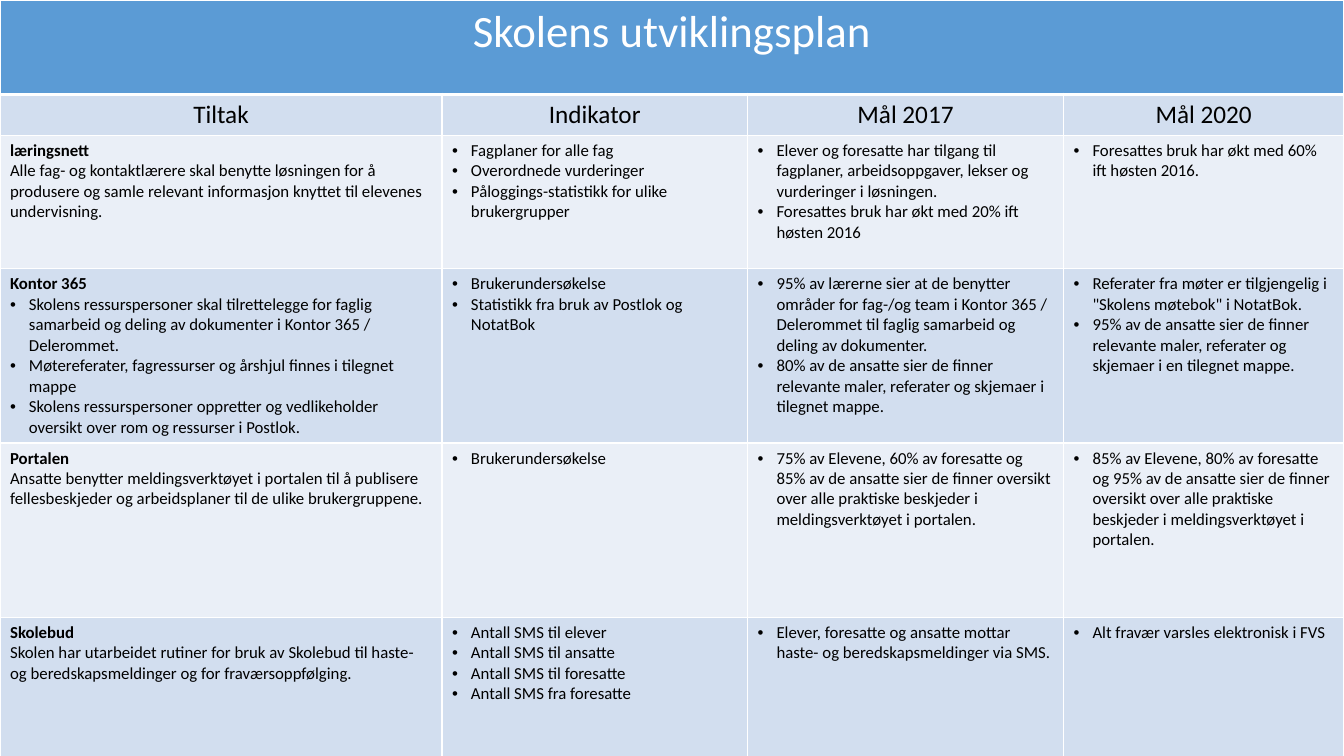
"""Build a one-slide school development plan as a table."""
from dataclasses import dataclass

from lxml.etree import SubElement
from pptx import Presentation
from pptx.dml.color import RGBColor
from pptx.enum.text import PP_ALIGN
from pptx.oxml.ns import qn
from pptx.util import Emu, Pt


@dataclass(frozen=True)
class Theme:
    font: str = "Calibri"
    title_size: int = 32
    head_size: int = 18
    body_size: int = 12
    title_fill: str = "5B9BD5"
    bands: tuple = ("D2DEEF", "EAEFF7")
    white: str = "FFFFFF"
    black: str = "000000"


THEME = Theme()
PX = 9525
SLIDE_W, SLIDE_H = 1280, 720
COLS = (421, 291, 301, 267)
ROWS = (90, 39, 127, 166, 166, 153)
BULLET_INDENT = 18

TITLE = "Skolens utviklingsplan"
HEADINGS = ("Tiltak", "Indikator", "Mål 2017", "Mål 2020")


@dataclass(frozen=True)
class Measure:
    name: str
    plain: tuple
    bullets: tuple
    indicators: tuple
    goals_2017: tuple
    goals_2020: tuple


MEASURES = (
    Measure(
        "læringsnett",
        ("Alle fag- og kontaktlærere skal benytte løsningen for å produsere og samle "
         "relevant informasjon knyttet til elevenes undervisning.",),
        (),
        ("Fagplaner for alle fag", "Overordnede vurderinger",
         "Påloggings-statistikk for ulike brukergrupper"),
        ("Elever og foresatte har tilgang til fagplaner, arbeidsoppgaver, lekser og "
         "vurderinger i løsningen.",
         "Foresattes bruk har økt med 20% ift høsten 2016"),
        ("Foresattes bruk har økt med 60% ift høsten 2016.",),
    ),
    Measure(
        "Kontor 365",
        (),
        ("Skolens ressurspersoner skal tilrettelegge for faglig samarbeid og deling av "
         "dokumenter i Kontor 365 / Delerommet.",
         "Møtereferater, fagressurser og årshjul finnes i tilegnet mappe",
         "Skolens ressurspersoner oppretter og vedlikeholder oversikt over rom og "
         "ressurser i Postlok."),
        ("Brukerundersøkelse", "Statistikk fra bruk av Postlok og NotatBok"),
        ("95% av lærerne sier at de benytter områder for fag-/og team i Kontor 365 / "
         "Delerommet til faglig samarbeid og deling av dokumenter.",
         "80% av de ansatte sier de finner relevante maler, referater og skjemaer i "
         "tilegnet mappe."),
        ("Referater fra møter er tilgjengelig i \"Skolens møtebok\" i NotatBok.",
         "95% av de ansatte sier de finner relevante maler, referater og skjemaer i en "
         "tilegnet mappe."),
    ),
    Measure(
        "Portalen",
        ("Ansatte benytter meldingsverktøyet i portalen til å publisere fellesbeskjeder "
         "og arbeidsplaner til de ulike brukergruppene.",),
        (),
        ("Brukerundersøkelse",),
        ("75% av Elevene, 60% av foresatte og 85% av de ansatte sier de finner oversikt "
         "over alle praktiske beskjeder i meldingsverktøyet i portalen.",),
        ("85% av Elevene, 80% av foresatte og 95% av de ansatte sier de finner oversikt "
         "over alle praktiske beskjeder i meldingsverktøyet i portalen.",),
    ),
    Measure(
        "Skolebud",
        ("Skolen har utarbeidet rutiner for bruk av Skolebud til haste- og "
         "beredskapsmeldinger og for fraværsoppfølging.",),
        (),
        ("Antall SMS til elever", "Antall SMS til ansatte",
         "Antall SMS til foresatte", "Antall SMS fra foresatte"),
        ("Elever, foresatte og ansatte mottar haste- og beredskapsmeldinger via SMS.",),
        ("Alt fravær varsles elektronisk i FVS",),
    ),
)


def px(n):
    return Emu(n * PX)


def style_cell(cell, fill, bottom=1):
    tcPr = cell._tc.get_or_add_tcPr()
    for side, width in (("L", 1), ("R", 1), ("T", 1), ("B", bottom)):
        ln = SubElement(tcPr, qn(f"a:ln{side}"), w=str(Pt(width)))
        solid = SubElement(ln, qn("a:solidFill"))
        SubElement(solid, qn("a:srgbClr"), val=THEME.white)
    cell.fill.solid()
    cell.fill.fore_color.rgb = RGBColor.from_string(fill)


def add_bullet(p):
    pPr = p._p.get_or_add_pPr()
    pPr.set("marL", str(px(BULLET_INDENT)))
    pPr.set("indent", str(-px(BULLET_INDENT)))
    SubElement(pPr, qn("a:buFont"), typeface="Arial")
    SubElement(pPr, qn("a:buChar"), char="•")


def add_text(p, text, size=THEME.body_size, color=THEME.black, bold=False):
    r = p.add_run()
    r.text = text
    r.font.name = THEME.font
    r.font.size = Pt(size)
    r.font.bold = bold
    r.font.color.rgb = RGBColor.from_string(color)


def write_heading(cell, text, size, color):
    p = cell.text_frame.paragraphs[0]
    p.alignment = PP_ALIGN.CENTER
    add_text(p, text, size, color)


def write_body(cell, name="", plain=(), bullets=()):
    tf = cell.text_frame
    lines = [(name, True, False)] if name else []
    lines += [(text, False, False) for text in plain]
    lines += [(text, False, True) for text in bullets]
    for i, (text, bold, bulleted) in enumerate(lines):
        p = tf.add_paragraph() if i else tf.paragraphs[0]
        if bulleted:
            add_bullet(p)
        add_text(p, text, bold=bold)


def add_plan_table(s):
    frame = s.shapes.add_table(len(ROWS), len(COLS), 0, 0, px(sum(COLS)), px(sum(ROWS)))
    table = frame.table
    for column, width in zip(table.columns, COLS):
        column.width = px(width)
    for i, (row, height) in enumerate(zip(table.rows, ROWS)):
        row.height = px(height)
        for cell in row.cells:
            if i == 0:
                style_cell(cell, THEME.title_fill, bottom=3)
            else:
                style_cell(cell, THEME.bands[(i - 1) % 2])
    table.cell(0, 0).merge(table.cell(0, len(COLS) - 1))
    return table


def main():
    prs = Presentation()
    prs.slide_width, prs.slide_height = px(SLIDE_W), px(SLIDE_H)
    s = prs.slides.add_slide(prs.slide_layouts[6])
    table = add_plan_table(s)
    write_heading(table.cell(0, 0), TITLE, THEME.title_size, THEME.white)
    for j, heading in enumerate(HEADINGS):
        write_heading(table.cell(1, j), heading, THEME.head_size, THEME.black)
    for i, m in enumerate(MEASURES, start=2):
        write_body(table.cell(i, 0), m.name, m.plain, m.bullets)
        for j, points in enumerate((m.indicators, m.goals_2017, m.goals_2020), start=1):
            write_body(table.cell(i, j), bullets=points)
    prs.save("out.pptx")


if __name__ == "__main__":
    main()
